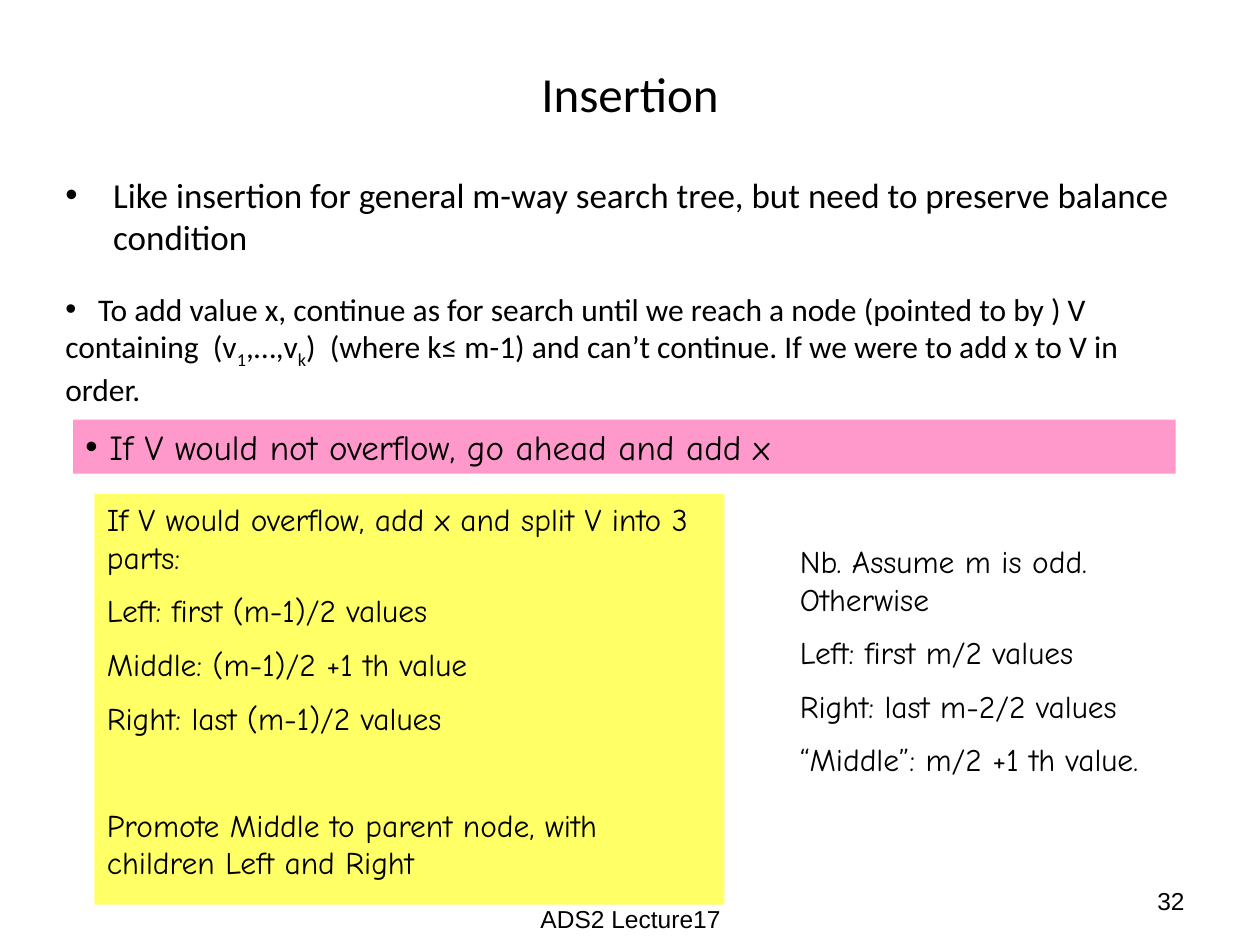
"""Build the slide on insertion into a balanced m-way search tree."""
from dataclasses import dataclass
from typing import Optional

from lxml.etree import SubElement
from pptx import Presentation
from pptx.dml.color import RGBColor
from pptx.enum.shapes import MSO_SHAPE
from pptx.enum.text import MSO_ANCHOR, PP_ALIGN
from pptx.oxml.ns import qn
from pptx.slide import Slide
from pptx.util import Inches, Pt


@dataclass(frozen=True)
class Theme:
    ink: RGBColor = RGBColor(0, 0, 0)
    pink: RGBColor = RGBColor(0xFF, 0x99, 0xCC)
    yellow: RGBColor = RGBColor(0xFF, 0xFF, 0x66)
    main_font: str = "Calibri"
    note_font: str = "Comic Neue"
    footer_font: str = "Arial"
    title_size: int = 28
    lead_size: int = 20
    text_size: int = 18
    footer_size: int = 14


THEME = Theme()


@dataclass(frozen=True)
class Run:
    text: str
    subscript: bool = False


@dataclass(frozen=True)
class Para:
    runs: tuple[Run, ...]
    before: float = 0


@dataclass(frozen=True)
class Bullet:
    hang: float = 0
    tab: float = 0


@dataclass(frozen=True)
class Block:
    left: float
    top: float
    width: float
    height: float
    paras: tuple[Para, ...]
    font: str
    size: int
    align: PP_ALIGN = PP_ALIGN.LEFT
    anchor: MSO_ANCHOR = MSO_ANCHOR.TOP
    fill: Optional[RGBColor] = None
    bullet: Optional[Bullet] = None


def line(text: str, before: float = 0) -> Para:
    return Para((Run(text),), before)


def spaced(first: str, *others: str) -> tuple[Para, ...]:
    return (line(first), *(line(text, THEME.text_size / 2) for text in others))


def add_bullet(paragraph, bullet: Bullet) -> None:
    props = paragraph._p.get_or_add_pPr()
    props.set("marL", str(Inches(bullet.hang)))
    props.set("indent", str(-Inches(bullet.hang)))
    SubElement(props, qn("a:buFont"), typeface="Arial")
    SubElement(props, qn("a:buChar"), char="•")
    if bullet.tab:
        stops = SubElement(props, qn("a:tabLst"))
        SubElement(stops, qn("a:tab"), pos=str(Inches(bullet.tab)), algn="l")


def add_block(slide: Slide, block: Block) -> None:
    place = [Inches(v) for v in (block.left, block.top, block.width, block.height)]
    if block.fill is None:
        holder = slide.shapes.add_textbox(*place)
    else:
        holder = slide.shapes.add_shape(MSO_SHAPE.RECTANGLE, *place)
        holder.shadow.inherit = False
        holder.fill.solid()
        holder.fill.fore_color.rgb = block.fill
        holder.line.fill.background()
    frame = holder.text_frame
    frame.word_wrap = True
    frame.vertical_anchor = block.anchor
    for index, para in enumerate(block.paras):
        paragraph = frame.add_paragraph() if index else frame.paragraphs[0]
        if block.bullet:
            add_bullet(paragraph, block.bullet)
        paragraph.alignment = block.align
        paragraph.space_before = Pt(para.before)
        for part in para.runs:
            run = paragraph.add_run()
            run.text = part.text
            run.font.name = block.font
            run.font.size = Pt(block.size)
            run.font.color.rgb = THEME.ink
            if part.subscript:
                run.font._element.set("baseline", "-25000")


SEARCH_STEP = Para((
    Run("\tTo add value x, continue as for search until we reach a node "
        "(pointed to by ) V containing  (v"),
    Run("1", True),
    Run(",…,v"),
    Run("k", True),
    Run(")  (where k≤ m-1) and can’t continue. If we were to add x to V in order."),
))

SPLIT_STEPS = spaced(
    "If V would overflow, add x and split V into 3 parts:",
    "Left: first (m-1)/2 values",
    "Middle: (m-1)/2 +1 th value",
    "Right: last (m-1)/2 values",
) + (line("Promote Middle to parent node, with children Left and Right", 39.5),)

EVEN_CASE = spaced(
    "Nb. Assume m is odd. Otherwise",
    "Left: first m/2 values",
    "Right: last m-2/2 values",
    "“Middle”: m/2 +1 th value.",
)

BLOCKS = (
    Block(7.17, 6.95, 2.33, 0.4, (line("32"),), THEME.footer_font,
          THEME.footer_size, PP_ALIGN.RIGHT, MSO_ANCHOR.MIDDLE),
    Block(0.5, 0.3, 9, 0.87, (line("Insertion"),), THEME.main_font,
          THEME.title_size, PP_ALIGN.CENTER, MSO_ANCHOR.MIDDLE),
    Block(0.42, 1.33, 9, 4.95,
          (line("Like insertion for general m-way search tree, "
                "but need to preserve balance condition"),),
          THEME.main_font, THEME.lead_size, bullet=Bullet(hang=0.38)),
    Block(0.42, 2.25, 9.08, 1, (SEARCH_STEP,), THEME.main_font,
          THEME.text_size, bullet=Bullet(tab=0.26)),
    Block(0.58, 3.33, 8.75, 0.43,
          (line("If V would not overflow, go ahead and add x"),),
          THEME.note_font, THEME.lead_size, fill=THEME.pink,
          bullet=Bullet(hang=0.19)),
    Block(0.75, 3.92, 5, 3.26, SPLIT_STEPS, THEME.note_font,
          THEME.text_size, fill=THEME.yellow),
    Block(6.25, 4.25, 2.9, 2.68, EVEN_CASE, THEME.note_font, THEME.text_size),
    Block(3.42, 7.12, 3.17, 0.34, (line("ADS2 Lecture17"),), THEME.footer_font,
          THEME.footer_size, PP_ALIGN.CENTER, MSO_ANCHOR.MIDDLE),
)


def main() -> None:
    deck = Presentation()
    deck.slide_width, deck.slide_height = Inches(10), Inches(7.5)
    slide = deck.slides.add_slide(deck.slide_layouts[6])
    for block in BLOCKS:
        add_block(slide, block)
    deck.save("out.pptx")


if __name__ == "__main__":
    main()
